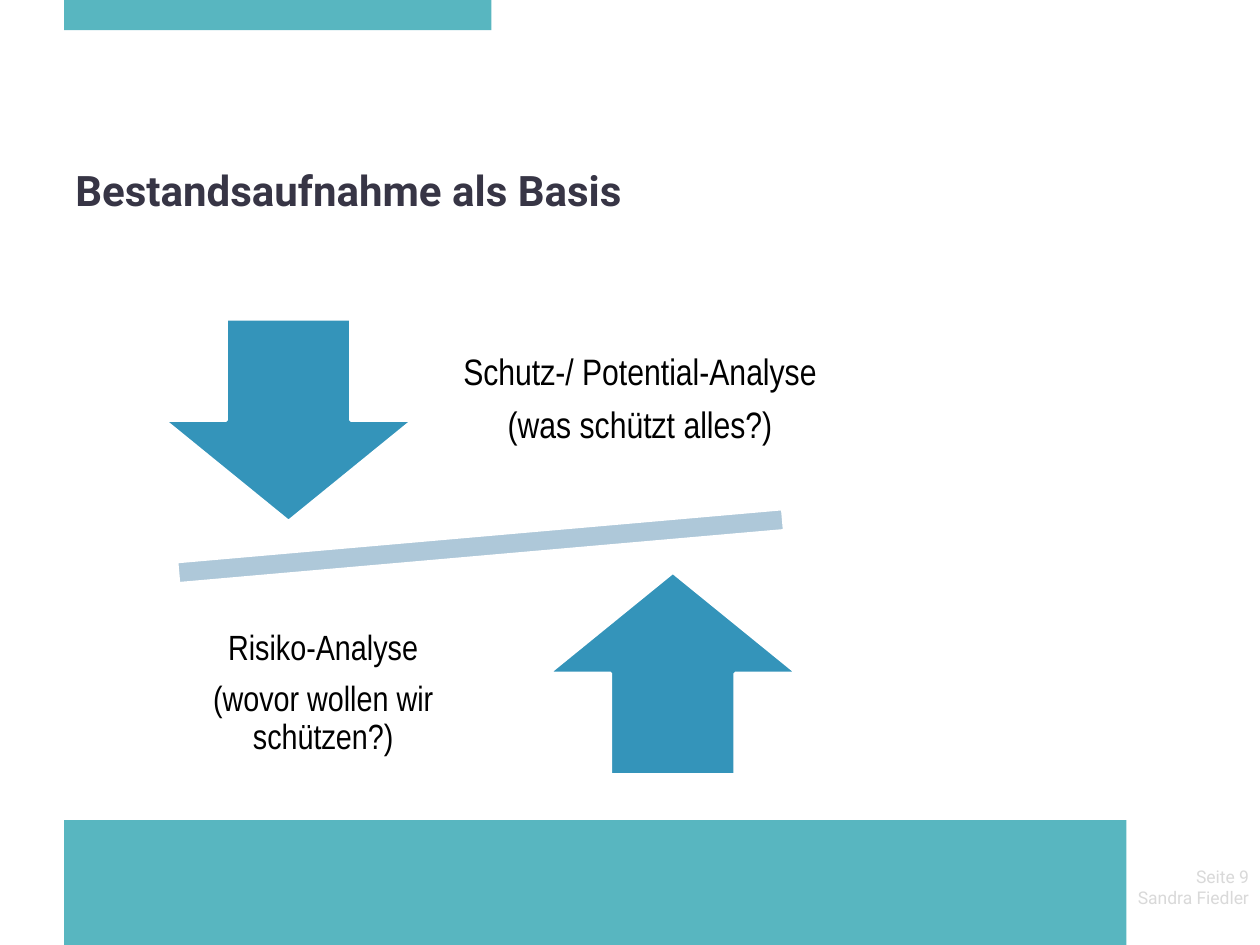
"""Build the slide on protection and risk analysis as a balance of two arrows."""
from dataclasses import dataclass

from pptx import Presentation
from pptx.dml.color import RGBColor
from pptx.enum.shapes import MSO_SHAPE as Shape
from pptx.enum.text import MSO_ANCHOR as Anchor, PP_ALIGN as Align
from pptx.util import Inches, Pt


@dataclass(frozen=True)
class Theme:
    band: str = "58B6C0"
    arrow: str = "3494BA"
    beam: str = "AEC8D9"
    outline: str = "FFFFFF"
    title: str = "373545"
    body: str = "000000"
    footer: str = "D9D9D9"
    heading_font: str = "Roboto"
    body_font: str = "Arial Narrow"
    title_size: int = 24
    protection_size: int = 21
    risk_size: int = 20
    footer_size: int = 10


THEME = Theme()
SLIDE_SIZE = (10, 7.5)
TITLE = ["Bestandsaufnahme als Basis"]
FOOTER = ["Seite 9", "Sandra Fiedler"]
BANDS = [(0.51, 6.51, 8.43, 0.99), (0.51, 0, 3.39, 0.24)]
BEAM = (0.53, 3.96, 6.57, 0.75)
BEAM_ROTATION = 355
ARROW_SIZE = (1.98, 1.61)
SIDES = [
    {"arrow": Shape.DOWN_ARROW, "corner": (1.3, 2.53),
     "lines": ["Schutz-/ Potential-Analyse", "(was schützt alles?)"],
     "box": (3.5, 2.33, 3.16, 1.69), "size": THEME.protection_size},
    {"arrow": Shape.UP_ARROW, "corner": (4.35, 4.54),
     "lines": ["Risiko-Analyse", "(wovor wollen wir schützen?)"],
     "box": (0.99, 4.66, 3.15, 1.69), "size": THEME.risk_size},
]


def add_figure(slide, kind, box, color, outline=None, rotation=0):
    shape = slide.shapes.add_shape(kind, *map(Inches, box))
    shape.shadow.inherit = False
    shape.rotation = rotation
    shape.fill.solid()
    shape.fill.fore_color.rgb = RGBColor.from_string(color)
    if outline:
        shape.line.color.rgb = RGBColor.from_string(outline)
        shape.line.width = Pt(2)
    else:
        shape.line.fill.background()


def add_text(slide, lines, box, *, size, color, font=THEME.heading_font, bold=False,
             align=Align.LEFT, anchor=Anchor.TOP, inset=None, spacing=1.0, after=0):
    frame = slide.shapes.add_textbox(*map(Inches, box)).text_frame
    frame.word_wrap = True
    frame.vertical_anchor = anchor
    if inset is not None:
        frame.margin_left = frame.margin_right = Inches(inset)
        frame.margin_top = frame.margin_bottom = Inches(inset)
    for index, line in enumerate(lines):
        paragraph = frame.add_paragraph() if index else frame.paragraphs[0]
        paragraph.alignment = align
        paragraph.line_spacing = spacing
        paragraph.space_after = Pt(after)
        run = paragraph.add_run()
        run.text = line
        run.font.name = font
        run.font.size = Pt(size)
        run.font.bold = bold
        run.font.color.rgb = RGBColor.from_string(color)


def main():
    presentation = Presentation()
    presentation.slide_width, presentation.slide_height = map(Inches, SLIDE_SIZE)
    slide = presentation.slides.add_slide(presentation.slide_layouts[6])

    for box in BANDS:
        add_figure(slide, Shape.RECTANGLE, box, THEME.band)
    add_text(slide, FOOTER, (8.86, 6.82, 1.15, 0.68), size=THEME.footer_size,
             color=THEME.footer, align=Align.RIGHT)
    add_text(slide, TITLE, (0.5, 1.23, 9, 0.55), size=THEME.title_size,
             color=THEME.title, bold=True, anchor=Anchor.MIDDLE)

    add_figure(slide, Shape.MATH_MINUS, BEAM, THEME.beam, THEME.outline, BEAM_ROTATION)
    for side in SIDES:
        add_figure(slide, side["arrow"], side["corner"] + ARROW_SIZE,
                   THEME.arrow, THEME.outline)
        add_text(slide, side["lines"], side["box"], size=side["size"],
                 color=THEME.body, font=THEME.body_font, align=Align.CENTER,
                 anchor=Anchor.MIDDLE, inset=0.16, spacing=0.9,
                 after=side["size"] * 0.38)

    presentation.save("out.pptx")


if __name__ == "__main__":
    main()
